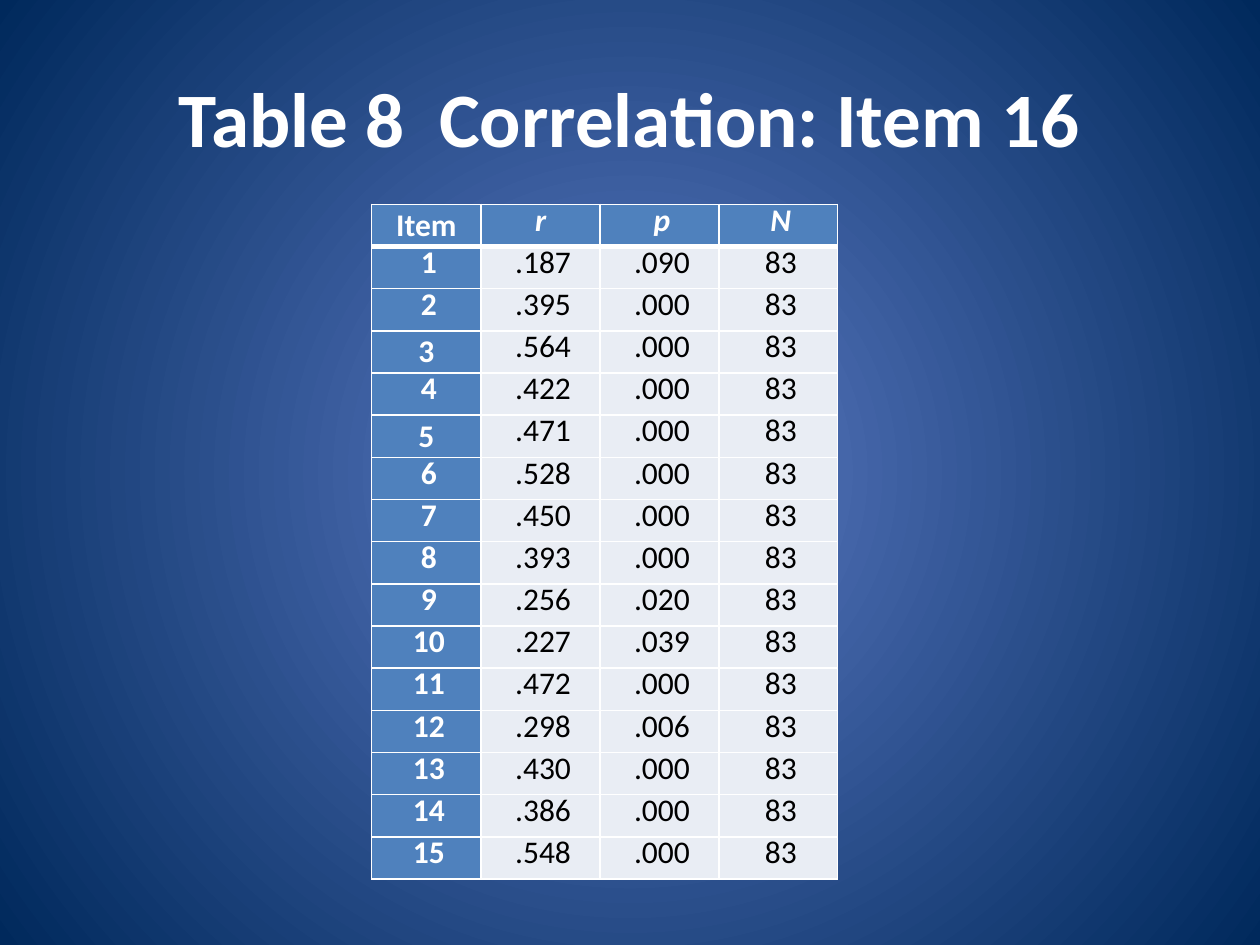
from lxml import etree
from pptx import Presentation
from pptx.dml.color import RGBColor
from pptx.enum import text
from pptx.oxml import ns
from pptx.util import Cm, Pt

WHITE = RGBColor(0xFF, 0xFF, 0xFF)
BLACK = RGBColor(0, 0, 0)
BLUE = RGBColor(0x4F, 0x81, 0xBD)
PALE = RGBColor(0xE9, 0xED, 0xF4)
GLOW = RGBColor(0x5E, 0x7C, 0xC5)
NAVY = RGBColor(0x00, 0x29, 0x5C)

HEADINGS = ["Item", "r", "p", "N"]
R_VALUES = [".187", ".395", ".564", ".422", ".471", ".528", ".450", ".393",
            ".256", ".227", ".472", ".298", ".430", ".386", ".548"]
P_VALUES = {1: ".090", 9: ".020", 10: ".039", 12: ".006"}
SAMPLE = "83"
SINGLE_SPACED = {"Item", "3", "5"}
UNINDENTED = SINGLE_SPACED | {"r"}


def write(frame, words, size=18, color=BLACK, bold=False, italic=False,
          spacing=None, indent=None):
    paragraph = frame.paragraphs[0]
    paragraph.alignment = text.PP_ALIGN.CENTER
    if spacing:
        paragraph.line_spacing = Pt(spacing)
    if indent:
        paragraph._p.get_or_add_pPr().set("marL", str(Cm(indent)))
    run = paragraph.add_run()
    run.text = words
    font = run.font
    font.name, font.size = "Calibri", Pt(size)
    font.bold, font.italic = bold, italic
    font.color.rgb = color


def paint_background(slide):
    fill = slide.background.fill
    fill.gradient()
    for stop, color in zip(fill.gradient_stops, (GLOW, NAVY)):
        stop.color.rgb = color
    fill.gradient_stops[0].position = 0
    fill.gradient_stops[1].position = 1
    linear = slide._element.find(".//" + ns.qn("a:lin"))
    radial = etree.Element(ns.qn("a:path"), path="circle")
    etree.SubElement(radial, ns.qn("a:fillToRect"),
                     l="50000", t="50000", r="50000", b="50000")
    linear.getparent().replace(linear, radial)


def add_title(slide, left, top, width, height):
    frame = slide.shapes.add_textbox(Cm(left), Cm(top), Cm(width), Cm(height)).text_frame
    frame.word_wrap = True
    frame.vertical_anchor = text.MSO_ANCHOR.MIDDLE
    write(frame, "Table 8  Correlation: Item 16", size=44, color=WHITE, bold=True)


def draw_borders(cell, **widths):
    properties = cell._tc.get_or_add_tcPr()
    for side, width in widths.items():
        line = etree.SubElement(properties, ns.qn("a:ln" + side), w=str(Pt(width)))
        solid = etree.SubElement(line, ns.qn("a:solidFill"))
        etree.SubElement(solid, ns.qn("a:srgbClr"), val=str(WHITE))


def fill_cell(cell, words, is_heading, is_label):
    if is_heading:
        draw_borders(cell, L=1, R=1, T=1, B=3)
    else:
        draw_borders(cell, L=1, R=1, B=1)
    emphasized = is_heading or is_label
    cell.fill.solid()
    cell.fill.fore_color.rgb = BLUE if emphasized else PALE
    cell.vertical_anchor = text.MSO_ANCHOR.MIDDLE
    cell.margin_left = cell.margin_right = Cm(0.18)
    cell.margin_top = cell.margin_bottom = 0
    write(cell.text_frame, words, color=WHITE if emphasized else BLACK,
          bold=emphasized, italic=is_heading and not is_label,
          spacing=None if words in SINGLE_SPACED else 16,
          indent=None if words in UNINDENTED else 0.1)


def add_correlations(slide, left, top, width, height):
    rows = [HEADINGS] + [[str(item), r, P_VALUES.get(item, ".000"), SAMPLE]
                         for item, r in enumerate(R_VALUES, 1)]
    table = slide.shapes.add_table(len(rows), len(HEADINGS), Cm(left), Cm(top),
                                   Cm(width), Cm(height)).table
    table.horz_banding = False
    item_width = 2.21
    for index, column in enumerate(table.columns):
        column.width = Cm((width - item_width) / 3 if index else item_width)
    for row_index, row in enumerate(rows):
        table.rows[row_index].height = Cm(height / len(rows))
        for column_index, words in enumerate(row):
            fill_cell(table.cell(row_index, column_index), words,
                      row_index == 0, column_index == 0)


def main():
    deck = Presentation()
    deck.slide_width, deck.slide_height = Cm(25.4), Cm(19.05)
    slide = deck.slides.add_slide(deck.slide_layouts[6])
    paint_background(slide)
    add_title(slide, 1.27, 0.76, 22.86, 3.18)
    add_correlations(slide, 7.49, 4.12, 9.4, 13.6)
    deck.save("out.pptx")


if __name__ == "__main__":
    main()
